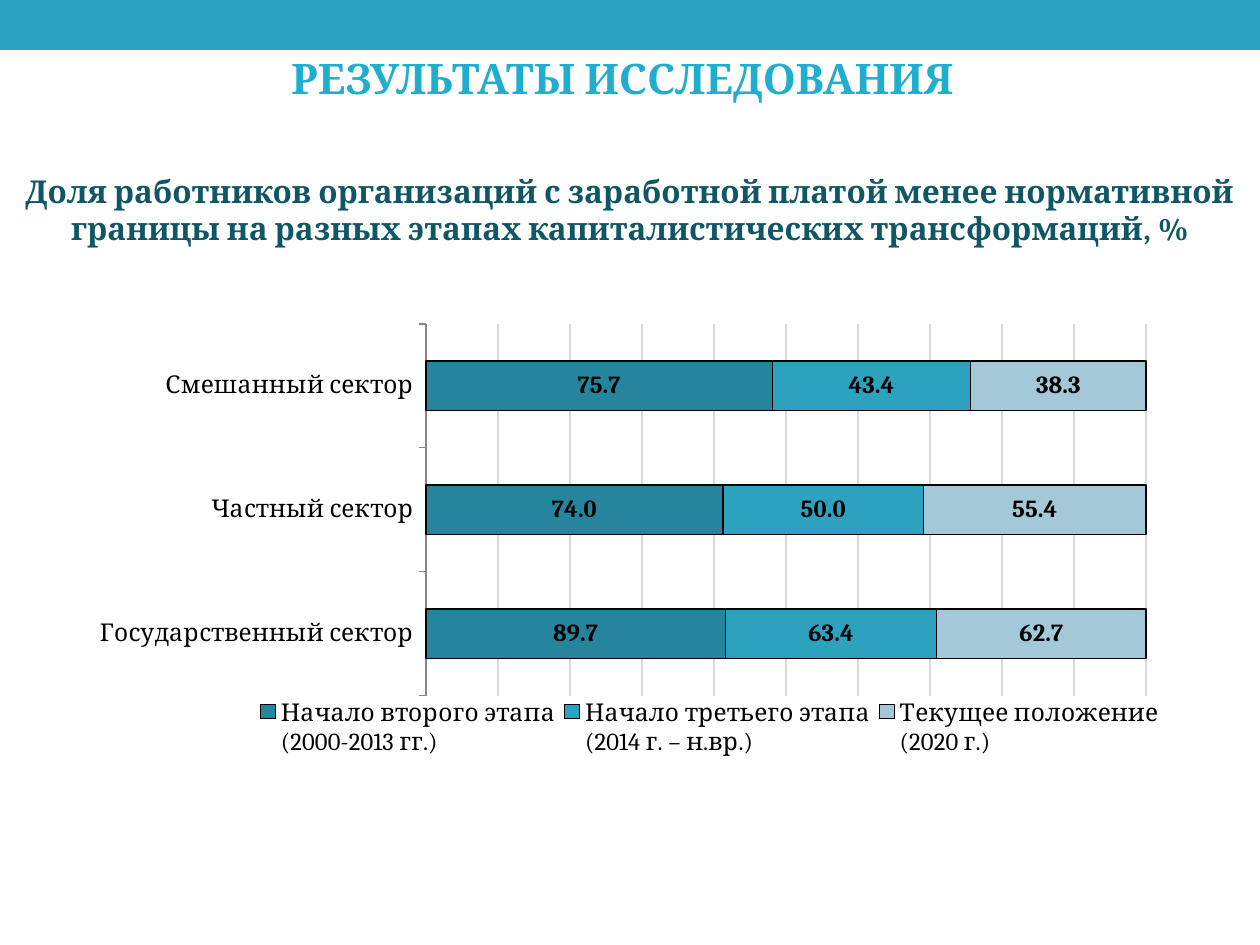
from lxml import etree
from pptx import Presentation
from pptx.chart.data import CategoryChartData
from pptx.dml.color import RGBColor
from pptx.enum.chart import XL_CHART_TYPE, XL_LABEL_POSITION, XL_LEGEND_POSITION, XL_TICK_LABEL_POSITION, XL_TICK_MARK
from pptx.enum.shapes import MSO_SHAPE
from pptx.enum.text import MSO_ANCHOR, PP_ALIGN
from pptx.oxml.ns import qn
from pptx.util import Pt

EMU_PER_PX = 914400 // 126
FONT = "Cambria"
RECTANGLE = MSO_SHAPE.RECTANGLE
CENTER = PP_ALIGN.CENTER
MIDDLE = MSO_ANCHOR.MIDDLE
STACKED_BARS = XL_CHART_TYPE.BAR_STACKED_100
LABEL_CENTER = XL_LABEL_POSITION.CENTER
LEGEND_BOTTOM = XL_LEGEND_POSITION.BOTTOM
LABELS_LOW = XL_TICK_LABEL_POSITION.LOW
TICK_OUTSIDE = XL_TICK_MARK.OUTSIDE

SECTORS = ["Государственный сектор", "Частный сектор", "Смешанный сектор"]
STAGES = [
    ("Начало второго этапа\n(2000-2013 гг.)", [89.7, 74, 75.7], "25859D"),
    ("Начало третьего этапа\n(2014 г. – н.вр.)", [63.4, 50, 43.4], "2DA2BF"),
    ("Текущее положение\n(2020 г.)", [62.7, 55.4, 38.3], "A3C8D8"),
]


def px(length):
    return length * EMU_PER_PX


def color(value):
    return RGBColor.from_string(value)


def manual_layout(left, top, width, height, inner=False):
    """Chart layout with lengths as fractions of the chart area."""
    layout = etree.Element(qn("c:layout"))
    manual = etree.SubElement(layout, qn("c:manualLayout"))
    settings = [("layoutTarget", "inner")] if inner else []
    settings += [("xMode", "edge"), ("yMode", "edge"),
                 ("x", left), ("y", top), ("w", width), ("h", height)]
    for name, value in settings:
        etree.SubElement(manual, qn(f"c:{name}")).set("val", str(value))
    return layout


class SlideBuilder:
    def __init__(self, slide):
        self.slide = slide

    def place(self, shape, left, top, width, height):
        shape.left, shape.top = px(left), px(top)
        shape.width, shape.height = px(width), px(height)

    def band(self, left, top, width, height, fill):
        shape = self.slide.shapes.add_shape(
            RECTANGLE, px(left), px(top), px(width), px(height))
        shape.shadow.inherit = False
        shape.fill.solid()
        shape.fill.fore_color.rgb = color(fill)
        shape.line.fill.background()

    def add_words(self, shape, text, size, text_color):
        frame = shape.text_frame
        frame.word_wrap = True
        frame.vertical_anchor = MIDDLE
        paragraph = frame.paragraphs[0]
        paragraph.alignment = CENTER
        run = paragraph.add_run()
        run.text = text
        self.style(run.font, size, text_color, bold=True)

    def style(self, font, size, text_color, bold=False):
        font.name = FONT
        font.size = Pt(size)
        font.bold = bold
        font.color.rgb = color(text_color)

    def title(self, box, text, size, text_color):
        shape = self.slide.shapes.title
        self.place(shape, *box)
        self.add_words(shape, text, size, text_color)

    def text(self, box, text, size, text_color):
        shape = self.slide.shapes.add_textbox(*map(px, box))
        self.add_words(shape, text, size, text_color)

    def bar_chart(self, box, categories, series_rows, size):
        data = CategoryChartData(number_format="0.0")
        data.categories = categories
        for name, values, _ in series_rows:
            data.add_series(name, values)
        chart = self.slide.shapes.add_chart(
            STACKED_BARS, *map(px, box), data).chart
        chart.has_title = False
        self.style(chart.font, size, "000000")

        # Bars and their values
        plot = chart.plots[0]
        plot.gap_width, plot.overlap = 150, 100
        plot.vary_by_categories = False
        for series, (_, _, fill) in zip(plot.series, series_rows):
            series.format.fill.solid()
            series.format.fill.fore_color.rgb = color(fill)
            series.format.line.color.rgb = color("000000")
            series.format.line.width = Pt(0.75)
            labels = series.data_labels
            labels.show_value = True
            labels.position = LABEL_CENTER
            labels.number_format = "0.0"
            labels.number_format_is_linked = False
            self.style(labels.font, size, "000000", bold=True)

        # Axes
        category_axis = chart.category_axis
        category_axis.major_tick_mark = TICK_OUTSIDE
        category_axis.tick_label_position = LABELS_LOW
        category_axis.format.line.color.rgb = color("868686")
        value_axis = chart.value_axis
        value_axis.visible = False
        value_axis.minimum_scale, value_axis.maximum_scale = 0, 1
        value_axis.major_unit = 0.1
        grid_line = value_axis.major_gridlines.format.line
        grid_line.color.rgb = color("D9D9D9")
        grid_line.width = Pt(0.75)

        # Legend and plot area positions
        chart.has_legend = True
        legend = chart.legend
        legend.position = LEGEND_BOTTOM
        legend.include_in_layout = False
        self.style(legend.font, size, "000000")
        legend_xml = chart._chartSpace.find(f".//{qn('c:legend')}")
        for layout in legend_xml.findall(qn("c:layout")):
            legend_xml.remove(layout)
        legend_xml.find(qn("c:legendPos")).addnext(
            manual_layout(0.16, 0.77, 0.84, 0.13))
        plot_xml = chart._chartSpace.find(f".//{qn('c:plotArea')}")
        for layout in plot_xml.findall(qn("c:layout")):
            plot_xml.remove(layout)
        plot_xml.insert(0, manual_layout(0.32, 0.02, 0.66, 0.75, inner=True))


def main():
    presentation = Presentation()
    presentation.slide_width, presentation.slide_height = px(1260), px(945)
    title_only = presentation.slide_layouts[5]
    builder = SlideBuilder(presentation.slides.add_slide(title_only))

    # Header
    builder.band(0, 0, 1260, 50, "2DA2BF")
    builder.title((0, 46, 1245, 64), "РЕЗУЛЬТАТЫ ИССЛЕДОВАНИЯ", 24, "1FAECD")

    # Chart with its heading
    builder.bar_chart((77, 314, 1091, 496), SECTORS, STAGES, 14)
    builder.text(
        (0, 165, 1260, 89),
        "Доля работников организаций с заработной платой менее нормативной "
        "границы на разных этапах капиталистических трансформаций, %",
        18, "105766")

    presentation.save("out.pptx")


if __name__ == "__main__":
    main()
